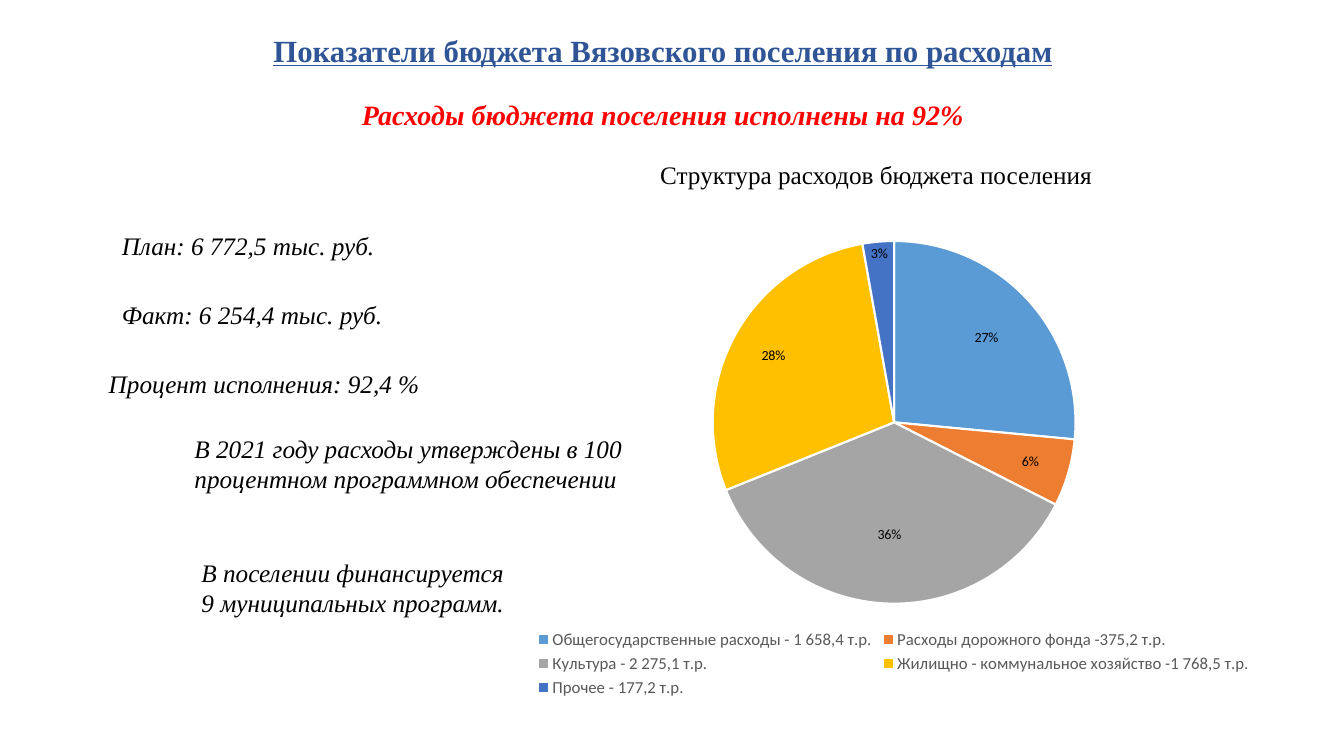
from dataclasses import dataclass
from math import cos, pi, sin

from lxml.etree import SubElement
from pptx import Presentation
from pptx.chart.data import CategoryChartData
from pptx.dml.color import RGBColor
from pptx.enum.chart import XL_CHART_TYPE as ChartType
from pptx.enum.chart import XL_LABEL_POSITION as LabelPosition
from pptx.enum.chart import XL_LEGEND_POSITION as LegendPosition
from pptx.enum.text import MSO_ANCHOR as Anchor
from pptx.enum.text import PP_ALIGN as Align
from pptx.oxml import parse_xml
from pptx.oxml.ns import nsdecls, qn
from pptx.util import Inches, Pt


@dataclass(frozen=True)
class Theme:
    serif: str = "Times New Roman"
    sans: str = "Calibri"
    heading: str = "2F5597"
    accent: str = "FF0000"
    ink: str = "000000"
    muted: str = "595959"
    white: str = "FFFFFF"
    slices: tuple = ("5B9BD5", "ED7D31", "A5A5A5", "FFC000", "4472C4")
    title_size: int = 22
    subtitle_size: int = 20
    body_size: int = 18
    legend_size: int = 12
    label_size: int = 10


TITLE = "Показатели бюджета Вязовского поселения по расходам"
SUBTITLE = "Расходы бюджета поселения исполнены на 92%"
CHART_TITLE = "Структура расходов бюджета поселения"
FACTS = [
    ("План: 6 772,5 тыс. руб.", (1.11, 2.24, 2.8, 0.4)),
    ("Факт: 6 254,4 тыс. руб.", (1.11, 2.92, 2.8, 0.4)),
    ("Процент исполнения: 92,4 %", (0.98, 3.6, 3.38, 0.4)),
    ("В 2021 году расходы утверждены в 100 процентном программном обеспечении",
     (1.83, 4.25, 4.51, 0.71)),
    ("В поселении финансируется\n9 муниципальных программ.", (1.9, 5.48, 3.23, 0.71)),
]
# Category, share, distance of the label from the centre as a part of the radius
EXPENSES = [
    ("Общегосударственные расходы - 1 658,4 т.р.", 0.265, 0.69),
    ("Расходы дорожного фонда -375,2 т.р.", 0.06, 0.78),
    ("Культура - 2 275,1 т.р.", 0.364, 0.62),
    ("Жилищно - коммунальное хозяйство -1 768,5 т.р.", 0.283, 0.76),
    ("Прочее - 177,2 т.р.", 0.028, 0.93),
]
CHART_FRAME = (5.06, 2.25, 7.61, 4.71)
PIE_FRAME = (7.07, 2.39, 3.6, 3.6)


class BudgetSlide:
    def __init__(self, deck, theme):
        self.theme = theme
        self.page = deck.slides.add_slide(deck.slide_layouts[5])

    def style(self, font, size, color, name=None, bold=False, italic=False):
        font.name = name or self.theme.serif
        font.size = Pt(size)
        font.color.rgb = RGBColor.from_string(color)
        font.bold, font.italic = bold, italic

    def title(self, heading, subtitle, frame):
        theme, box = self.theme, self.page.shapes.title
        box.left, box.top, box.width, box.height = map(Inches, frame)
        box.text_frame.text = f"{heading}\n{subtitle}"
        box.text_frame.vertical_anchor = Anchor.TOP
        first, second = box.text_frame.paragraphs
        for para in (first, second):
            para.alignment = Align.CENTER
            para.line_spacing = 1.0
        second.space_before = Pt(21)
        self.style(first.runs[0].font, theme.title_size, theme.heading, bold=True)
        first.runs[0].font.underline = True
        self.style(second.runs[0].font, theme.subtitle_size, theme.accent, bold=True, italic=True)

    def text(self, words, frame, italic=True):
        box = self.page.shapes.add_textbox(*map(Inches, frame))
        box.text_frame.word_wrap = True
        box.text_frame.text = words
        for para in box.text_frame.paragraphs:
            self.style(para.runs[0].font, self.theme.body_size, self.theme.ink, italic=italic)

    def pie(self, expenses, frame, pie_frame):
        theme = self.theme
        data = CategoryChartData(number_format="0%")
        data.categories = [name for name, _, _ in expenses]
        data.add_series("Series 1", [share for _, share, _ in expenses])
        chart = self.page.shapes.add_chart(ChartType.PIE, *map(Inches, frame), data).chart
        chart.has_title = False
        self.style(chart.font, theme.label_size, theme.ink, theme.sans)
        chart.has_legend = True
        chart.legend.position = LegendPosition.BOTTOM
        chart.legend.include_in_layout = False
        self.style(chart.legend.font, theme.legend_size, theme.muted, theme.sans)

        left, top, width, height = frame
        pie_left, pie_top, pie_width, pie_height = pie_frame
        area = chart._chartSpace.find(".//" + qn("c:plotArea"))
        for old in area.findall(qn("c:layout")):
            area.remove(old)
        area.insert(0, self.layout(
            layoutTarget="inner", xMode="edge", yMode="edge",
            x=round((pie_left - left) / width, 3), y=round((pie_top - top) / height, 3),
            w=round(pie_width / width, 3), h=round(pie_height / height, 3)))

        plot = chart.plots[0]
        plot.vary_by_categories = True
        points = plot.series[0].points
        radius, passed = pie_width / 2, 0
        for index, (_, share, distance) in enumerate(expenses):
            point = points[index]
            point.format.fill.solid()
            point.format.fill.fore_color.rgb = RGBColor.from_string(theme.slices[index])
            point.format.line.color.rgb = RGBColor.from_string(theme.white)
            point.format.line.width = Pt(1.5)
            self.style(point.data_label.font, theme.label_size, theme.ink, theme.sans)
            point.data_label.position = LabelPosition.CENTER
            angle = 2 * pi * (passed + share / 2)
            shift = radius * (distance - 0.5)
            label = area.findall(".//" + qn("c:dLbl"))[index]
            label.insert(1, self.layout(x=round(shift * sin(angle) / width, 3),
                                        y=round(-shift * cos(angle) / height, 3)))
            passed += share

    @staticmethod
    def layout(**settings):
        """Return a manual chart layout; lengths are parts of the chart size."""
        layout = parse_xml(f"<c:layout {nsdecls('c')}><c:manualLayout/></c:layout>")
        for name, value in settings.items():
            SubElement(layout[0], qn(f"c:{name}")).set("val", str(value))
        return layout


def main():
    deck = Presentation()
    deck.slide_width, deck.slide_height = Inches(13.33), Inches(7.5)
    slide = BudgetSlide(deck, Theme())
    slide.title(TITLE, SUBTITLE, (2.37, 0.26, 8.41, 1.41))
    for words, frame in FACTS:
        slide.text(words, frame)
    slide.text(CHART_TITLE, (6.45, 1.53, 5.74, 0.4), italic=False)
    slide.pie(EXPENSES, CHART_FRAME, PIE_FRAME)
    deck.save("out.pptx")


if __name__ == "__main__":
    main()
